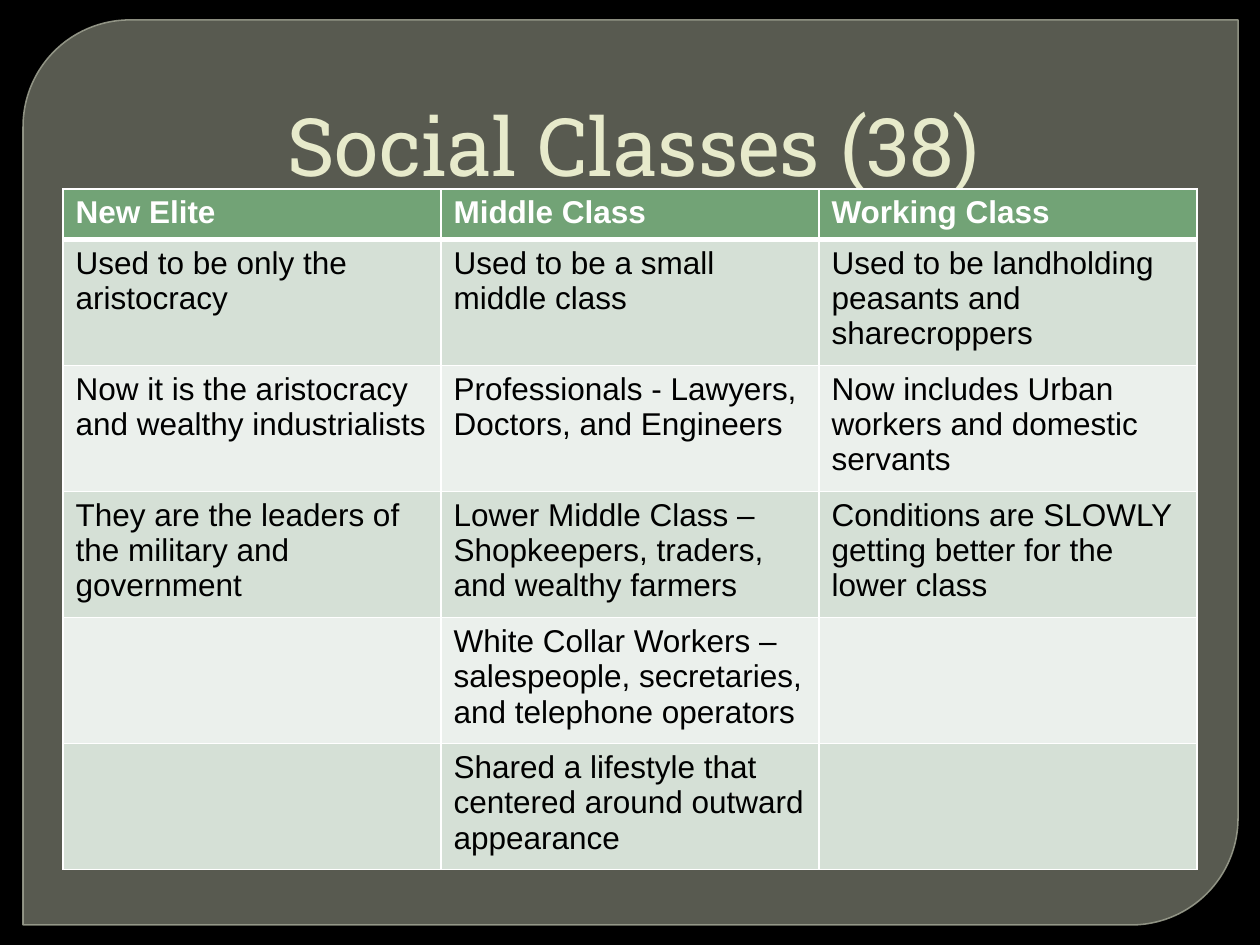
from dataclasses import dataclass

from lxml import etree
from pptx import Presentation
from pptx.dml.color import RGBColor
from pptx.enum.shapes import MSO_SHAPE
from pptx.enum.text import MSO_ANCHOR, PP_ALIGN
from pptx.oxml.ns import qn
from pptx.util import Emu, Pt

PANEL_SHAPE = MSO_SHAPE.ROUND_2_DIAG_RECTANGLE
BOTTOM = MSO_ANCHOR.BOTTOM
CENTER = PP_ALIGN.CENTER
EMU_PER_PX = 914400 / 126


@dataclass(frozen=True)
class Theme:
    background: str = "000000"
    panel: str = "888B7B"
    panel_line: str = "9DA090"
    title: str = "E7EACB"
    header: str = "72A376"
    bands: tuple = ("D5E0D6", "EBF0EC")
    header_text: str = "FFFFFF"
    body_text: str = "000000"
    border: str = "FFFFFF"
    title_font: str = "Roboto Slab"
    body_font: str = "Arial"
    title_size: int = 46
    body_size: int = 18


THEME = Theme()

CLASSES = [
    ("New Elite", "Middle Class", "Working Class"),
    ("Used to be only the aristocracy",
     "Used to be a small middle class",
     "Used to be landholding peasants and sharecroppers"),
    ("Now it is the aristocracy and wealthy industrialists",
     "Professionals - Lawyers, Doctors, and Engineers",
     "Now includes Urban workers and domestic servants"),
    ("They are the leaders of the military and government",
     "Lower Middle Class – Shopkeepers, traders, and wealthy farmers",
     "Conditions are SLOWLY getting better for the lower class"),
    ("",
     "White Collar Workers – salespeople, secretaries, and telephone operators",
     ""),
    ("",
     "Shared a lifestyle that centered around outward appearance",
     ""),
]


def px(value):
    return Emu(round(value * EMU_PER_PX))


def rgb(color):
    return RGBColor.from_string(color)


def add_run(paragraph, text, font, size, color, bold=False):
    run = paragraph.add_run()
    run.text = text
    run.font.name = font
    run.font.size = Pt(size)
    run.font.bold = bold
    run.font.color.rgb = rgb(color)


def set_alpha(color_format_parent, percent):
    color = color_format_parent.find(".//" + qn("a:srgbClr"))
    etree.SubElement(color, qn("a:alpha")).set("val", str(percent * 1000))


def add_panel(slide, left, top, width, height):
    panel = slide.shapes.add_shape(
        PANEL_SHAPE, px(left), px(top), px(width), px(height))
    panel.shadow.inherit = False
    panel.adjustments[0] = 0.118
    panel.adjustments[1] = 0
    panel.fill.solid()
    panel.fill.fore_color.rgb = rgb(THEME.panel)
    panel.line.color.rgb = rgb(THEME.panel_line)
    panel.line.width = Pt(0.87)
    properties = panel._element.spPr
    set_alpha(properties.find(qn("a:solidFill")), 65)
    set_alpha(properties.find(qn("a:ln")), 88)


def add_title(slide, text, left, top, width, height):
    title = slide.shapes.add_textbox(px(left), px(top), px(width), px(height))
    frame = title.text_frame
    frame.word_wrap = True
    frame.vertical_anchor = BOTTOM
    frame.margin_bottom = 0
    heading = frame.paragraphs[0]
    heading.alignment = CENTER
    heading._p.get_or_add_pPr().set("marL", str(px(7)))
    add_run(heading, text, THEME.title_font, THEME.title_size, THEME.title)


def set_borders(cell, widths):
    """Draw the cell's edges; widths maps each edge tag to points."""
    properties = cell._tc.get_or_add_tcPr()
    for index, (edge, width) in enumerate(widths.items()):
        line = etree.Element(qn(f"a:{edge}"), w=str(Pt(width)))
        fill = etree.SubElement(line, qn("a:solidFill"))
        etree.SubElement(fill, qn("a:srgbClr"), val=THEME.border)
        properties.insert(index, line)


def add_class_table(slide, rows, left, top, width, header_height, row_height):
    height = header_height + row_height * (len(rows) - 1)
    table = slide.shapes.add_table(
        len(rows), len(rows[0]), px(left), px(top), px(width), px(height)).table
    for column in table.columns:
        column.width = px(width // len(rows[0]))
    for r, texts in enumerate(rows):
        is_header = r == 0
        table.rows[r].height = px(header_height if is_header else row_height)
        fill = THEME.header if is_header else THEME.bands[(r - 1) % 2]
        color = THEME.header_text if is_header else THEME.body_text
        # The heavy rule under the header is shared with the first body row
        edges = {"lnL": 1, "lnR": 1,
                 "lnT": 3 if r == 1 else 1, "lnB": 3 if is_header else 1}
        for c, text in enumerate(texts):
            cell = table.cell(r, c)
            cell.fill.solid()
            cell.fill.fore_color.rgb = rgb(fill)
            set_borders(cell, edges)
            if text:
                add_run(cell.text_frame.paragraphs[0], text, THEME.body_font,
                        THEME.body_size, color, is_header)


def main():
    deck = Presentation()
    deck.slide_width, deck.slide_height = px(1260), px(945)
    slide = deck.slides.add_slide(deck.slide_layouts[6])

    # Backdrop
    slide.background.fill.solid()
    slide.background.fill.fore_color.rgb = rgb(THEME.background)
    add_panel(slide, 23, 20, 1215, 905)

    # Heading and comparison of the classes
    add_title(slide, "Social Classes (38)", 63, 35, 1134, 158)
    add_class_table(slide, CLASSES, 63, 189, 1134, 47, 118)

    deck.save("out.pptx")


if __name__ == "__main__":
    main()
